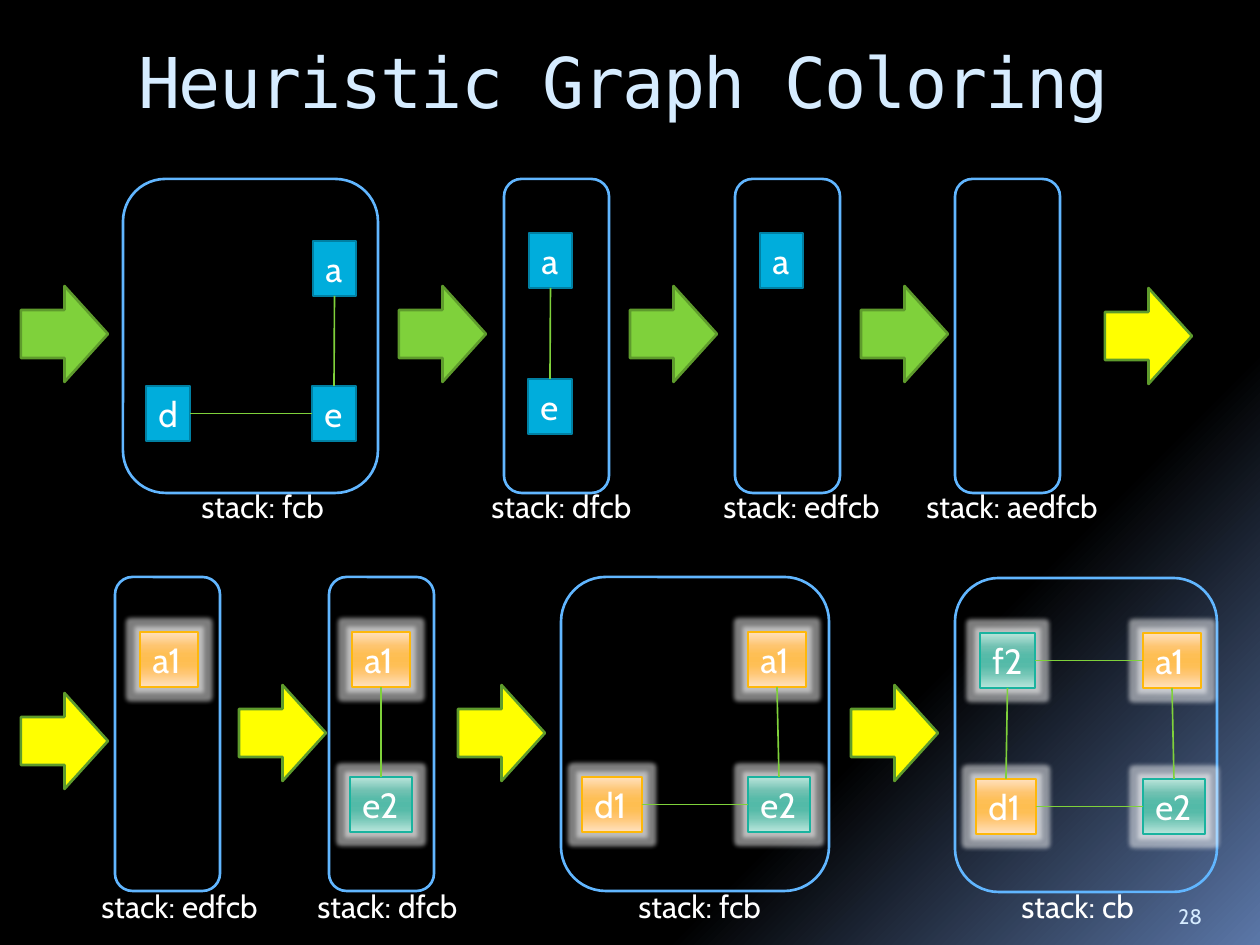
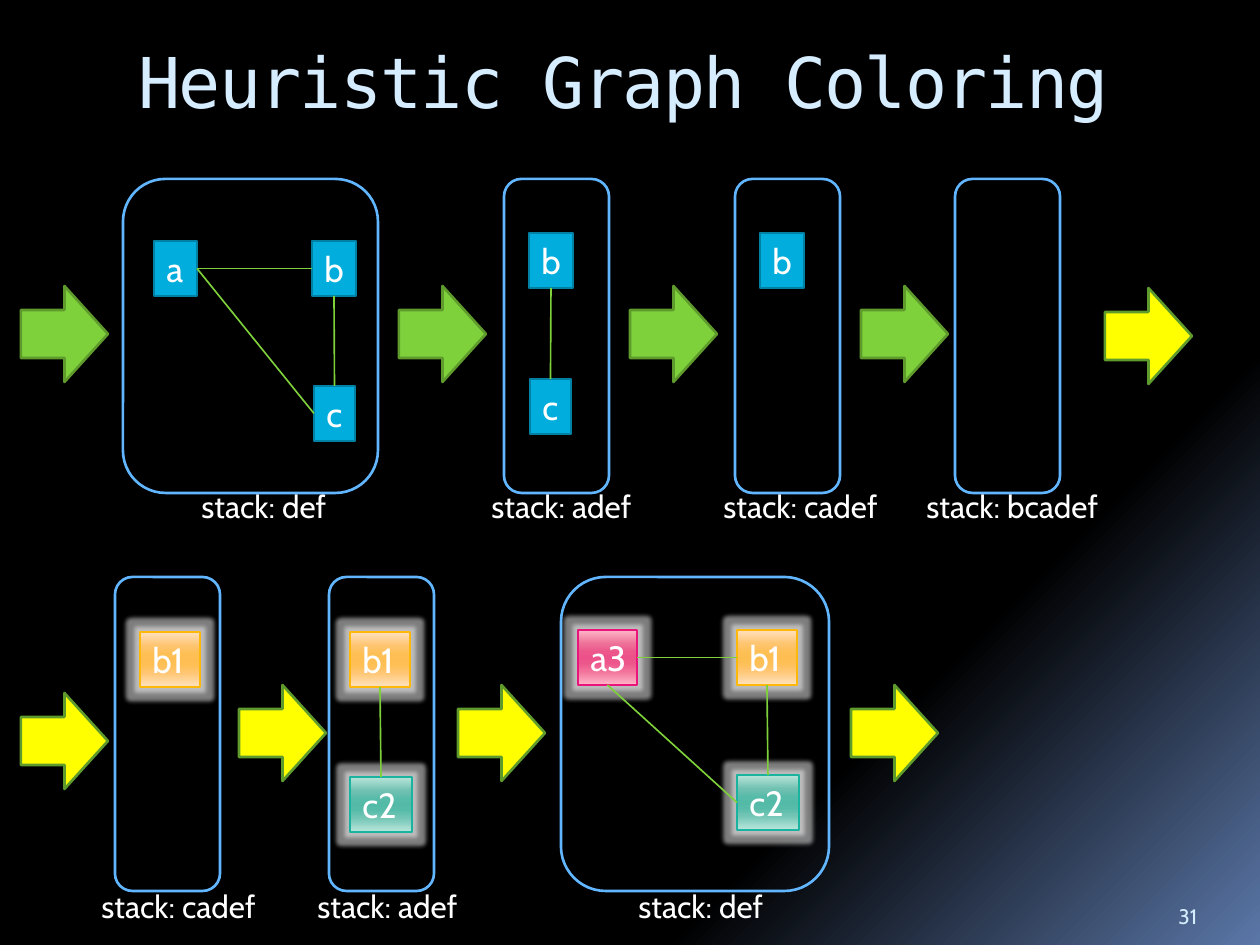
from typing import Any, NamedTuple

from lxml.etree import SubElement
from pptx import Presentation
from pptx.dml.color import RGBColor as Rgb
from pptx.enum.shapes import MSO_CONNECTOR as Wire, MSO_SHAPE as Form
from pptx.enum.text import MSO_ANCHOR as Anchor, PP_ALIGN as Align
from pptx.oxml import parse_xml
from pptx.oxml.ns import nsdecls, qn
from pptx.util import Emu, Pt

WIDE, HIGH = 1260, 945
INK = {"white": "FFFFFF", "pale": "D6ECFF", "frame": "61B6FF", "green": "7FD13B",
       "moss": "5E9B2C", "yellow": "FFFF00", "blue": "00ADDC", "navy": "0080A3",
       "gold": "FEB80A", "teal": "1AB39F", "pink": "EA157A"}
TONES = {"1": "gold", "2": "teal", "3": "pink"}
STEPS = (0, 25, 40, 50, 60, 75, 100)
RAMPS = {
    "gold": ("FFE1BF", "FEC570", "FEBF55", "FEBE51", "FEBF55", "FFC775", "FFE1BF"),
    "teal": ("BBE5DB", "71C1B2", "57BBA9", "53BAA8", "57BBA9", "74C6B6", "B9E6DC"),
    "pink": ("FFB6C9", "ED7198", "EC568B", "EC5289", "EC568B", "F2729A", "FFB6C9"),
}
NIGHT = ((65, "000000"), (73, "000000"), (100, "5B77A8"))
TOP, LEFT, BASE, RIGHT = range(4)


class Style(NamedTuple):
    """Format of a piece of text."""
    font: dict[str, Any]
    frame: dict[str, Any]


class Stage(NamedTuple):
    """Frame of one graph and the left edge of its label."""
    x: int
    y: int
    w: int
    label: int


class Arrow(NamedTuple):
    """Block arrow between stages."""
    x: int
    y: int
    tone: str


class Node(NamedTuple):
    """Graph node; a digit in its text is its assigned colour."""
    text: str
    x: int
    y: int
    w: int


class Link(NamedTuple):
    """Edge between the sides of two nodes."""
    start: int
    leave: int
    end: int
    reach: int


class Page(NamedTuple):
    """Content of one slide."""
    number: str
    stacks: list[str]
    nodes: list[Node]
    links: list[Link]


CABIN = {"name": "Cabin", "bold": False}
PLAIN = {"word_wrap": True, "vertical_anchor": Anchor.TOP}
TITLE = Style({"name": "DejaVu Sans Mono", "size": Pt(40)}, PLAIN)
LABEL = Style({**CABIN, "size": Pt(18)}, PLAIN)
MARK = Style({**CABIN, "size": Pt(20)}, {**PLAIN, "word_wrap": False})
FOOT = Style({**CABIN, "size": Pt(12)}, {**PLAIN, "vertical_anchor": Anchor.BOTTOM})

STAGES = [Stage(123, 179, 255, 189), Stage(504, 179, 105, 479),
          Stage(735, 179, 105, 711), Stage(955, 179, 105, 914),
          Stage(115, 577, 105, 89), Stage(329, 577, 105, 305),
          Stage(561, 577, 268, 626), Stage(955, 578, 262, 1009)]
ARROWS = [*(Arrow(x, 286, "green") for x in (21, 399, 630, 861)),
          Arrow(1105, 288, "yellow"), Arrow(21, 693, "yellow"),
          *(Arrow(x, 685, "yellow") for x in (239, 458, 851))]

PAGES = [
    Page("28", ["fcb", "dfcb", "edfcb", "aedfcb", "edfcb", "dfcb", "fcb", "cb"],
         [Node("a", 313, 241, 43), Node("d", 146, 386, 44), Node("e", 312, 386, 44),
          Node("a", 529, 233, 43), Node("e", 528, 379, 44), Node("a", 760, 233, 43),
          Node("a1", 140, 632, 58), Node("a1", 352, 632, 58), Node("e2", 350, 777, 62),
          Node("a1", 748, 632, 58), Node("d1", 582, 777, 60), Node("e2", 748, 777, 62),
          Node("f2", 980, 633, 55), Node("a1", 1143, 633, 58),
          Node("d1", 976, 779, 60), Node("e2", 1143, 779, 62)],
         [Link(0, BASE, 2, TOP), Link(2, LEFT, 1, RIGHT), Link(3, BASE, 4, TOP),
          Link(7, BASE, 8, TOP), Link(9, BASE, 11, TOP), Link(11, LEFT, 10, RIGHT),
          Link(12, RIGHT, 13, LEFT), Link(12, BASE, 14, TOP),
          Link(14, RIGHT, 15, LEFT), Link(13, BASE, 15, TOP)]),
    Page("31", ["def", "adef", "cadef", "bcadef", "cadef", "adef", "def"],
         [Node("a", 154, 241, 43), Node("b", 312, 241, 44), Node("c", 314, 386, 41),
          Node("b", 529, 233, 44), Node("c", 530, 379, 41), Node("b", 760, 233, 44),
          Node("b1", 140, 632, 60), Node("b1", 350, 632, 60), Node("c2", 350, 777, 62),
          Node("a3", 578, 630, 59), Node("b1", 737, 630, 60), Node("c2", 737, 775, 62)],
         [Link(0, RIGHT, 1, LEFT), Link(1, BASE, 2, TOP), Link(0, RIGHT, 2, LEFT),
          Link(3, BASE, 4, TOP), Link(7, BASE, 8, TOP), Link(9, RIGHT, 10, LEFT),
          Link(10, BASE, 11, TOP), Link(9, BASE, 11, LEFT)]),
]


def px(count: int) -> Emu:
    """Turn pixels into EMU."""
    return Emu(round(count * 914400 / 126))


def rgb(tone: str) -> Rgb:
    """Look up a named colour."""
    return Rgb.from_string(INK[tone])


def assign(thing: Any, values: dict[str, Any]) -> None:
    """Set each attribute in the dict."""
    for name, value in values.items():
        setattr(thing, name, value)


def shade(parent: Any, stops: Any, angle: int) -> None:
    """Swap the solid fill of an element for a gradient."""
    marks = "".join(f'<a:gs pos="{at * 1000}"><a:srgbClr val="{tint}"/></a:gs>'
                    for at, tint in stops)
    ramp = parse_xml(f'<a:gradFill {nsdecls("a")} rotWithShape="1"><a:gsLst>{marks}</a:gsLst>'
                     f'<a:lin ang="{angle * 60000}" scaled="0"/></a:gradFill>')
    parent.replace(parent.find(qn("a:solidFill")), ramp)


def write(shape: Any, text: str, style: Style, tone: str = "white") -> None:
    """Put left-aligned text in a shape."""
    frame = shape.text_frame
    assign(frame, style.frame)
    line = frame.paragraphs[0]
    line.alignment = Align.LEFT
    run = line.add_run()
    run.text = text
    assign(run.font, style.font)
    run.font.color.rgb = rgb(tone)


def label(slide: Any, box: tuple[int, ...], text: str, style: Style,
          tone: str = "white") -> Any:
    """Add a text box."""
    shape = slide.shapes.add_textbox(*map(px, box))
    write(shape, text, style, tone)
    return shape


def block(slide: Any, form: Any, box: tuple[int, ...], fill: str | None,
          edge: str, width: float = 1.5) -> Any:
    """Add a flat preset shape."""
    shape = slide.shapes.add_shape(form, *map(px, box))
    shape.shadow.inherit = False
    if fill:
        shape.fill.solid()
        shape.fill.fore_color.rgb = rgb(fill)
    else:
        shape.fill.background()
    shape.line.color.rgb = rgb(edge)
    shape.line.width = Pt(width)
    return shape


def draw_node(slide: Any, node: Node) -> Any:
    """Draw a blue node, or a glowing one once it has a colour."""
    box = (node.x, node.y, node.w, 55)
    tone = TONES.get(node.text[1:])
    if not tone:
        shape = block(slide, Form.RECTANGLE, box, "blue", "navy")
    else:
        shape = block(slide, Form.RECTANGLE, box, tone, tone, 0.94)
        props = shape.element.spPr
        shade(props, zip(STEPS, RAMPS[tone]), 90)
        props.find(qn("a:effectLst")).append(parse_xml(
            f'<a:glow {nsdecls("a")} rad="{px(9)}"><a:srgbClr val="{INK["white"]}">'
            '<a:alpha val="50000"/></a:srgbClr></a:glow>'))
    write(shape, node.text, MARK)
    return shape


def draw_link(slide: Any, link: Link, shapes: list[Any]) -> None:
    """Join two nodes with a green line."""
    wire = slide.shapes.add_connector(Wire.STRAIGHT, 0, 0, 0, 0)
    wire.begin_connect(shapes[link.start], link.leave)
    wire.end_connect(shapes[link.end], link.reach)
    wire.line.color.rgb = rgb("green")
    wire.line.width = Pt(0.94)
    SubElement(wire.element.spPr, qn("a:effectLst"))


def draw_page(deck: Any, page: Page) -> None:
    """Build one slide."""
    slide = deck.slides.add_slide(deck.slide_layouts[6])
    slide.background.fill.solid()
    shade(slide.element.find(".//" + qn("p:bgPr")), NIGHT, 45)
    title = label(slide, (126, 32, 1071, 126), "Heuristic Graph Coloring", TITLE, "pale")
    title.text_frame.paragraphs[0].runs[0].font._element.set("spc", "-100")
    label(slide, (1166, 885, 63, 50), page.number, FOOT, "pale")
    for stage, stack in zip(STAGES, page.stacks):
        block(slide, Form.ROUNDED_RECTANGLE, (stage.x, stage.y, stage.w, 314), None, "frame")
        top = 481 if stage.y < HIGH // 2 else 881
        label(slide, (stage.label, top, 210, 50), f"stack: {stack}", LABEL)
    for arrow in ARROWS:
        block(slide, Form.RIGHT_ARROW, (arrow.x, arrow.y, 87, 96), arrow.tone, "moss")
    shapes = [draw_node(slide, node) for node in page.nodes]
    for link in page.links:
        draw_link(slide, link, shapes)


def main() -> None:
    """Build and save the deck."""
    deck = Presentation()
    assign(deck, {"slide_width": px(WIDE), "slide_height": px(HIGH)})
    for page in PAGES:
        draw_page(deck, page)
    deck.save("out.pptx")


if __name__ == "__main__":
    main()
